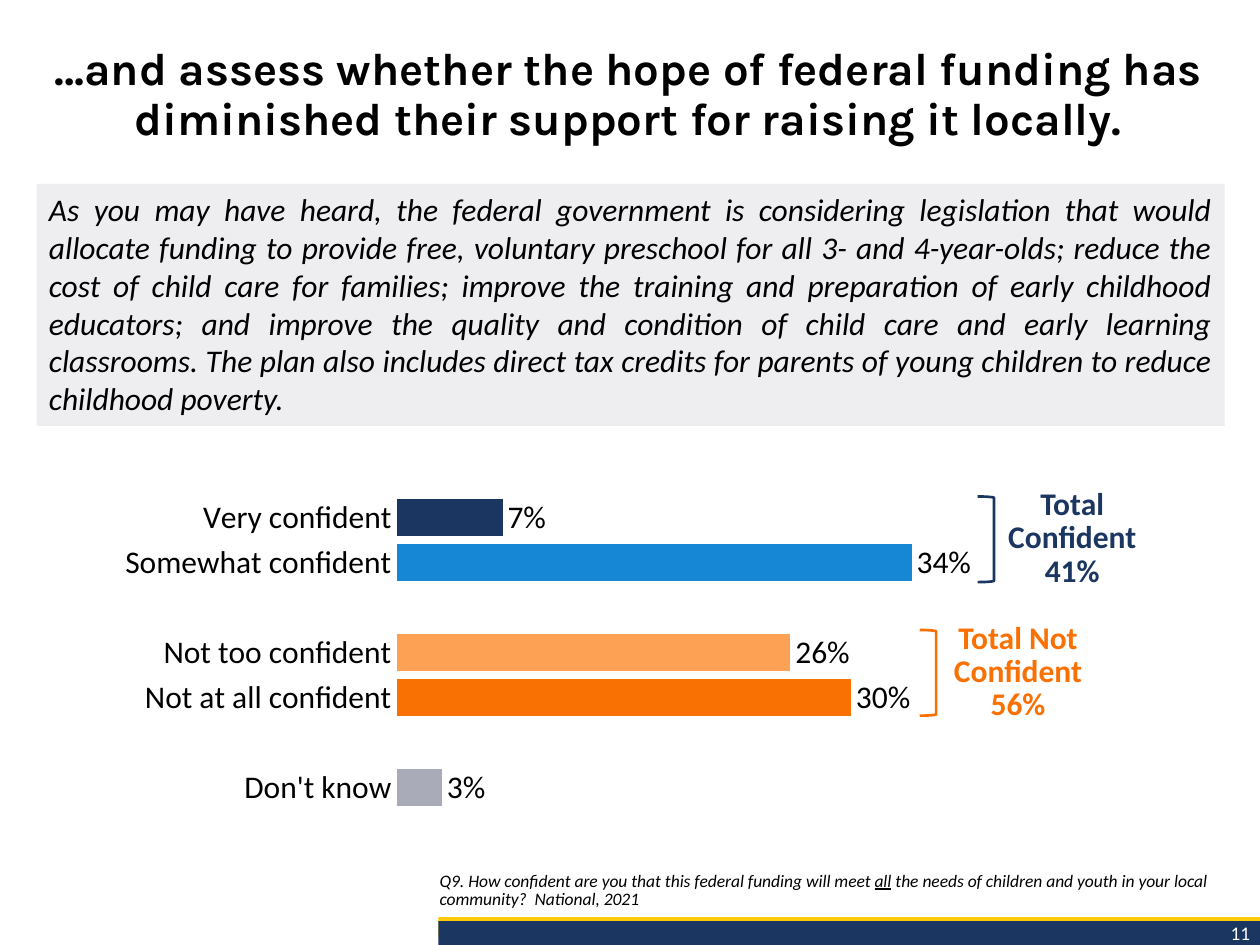
import collections
import dataclasses

import lxml.etree
import pptx
import pptx.chart.data
import pptx.dml.color
import pptx.enum.chart
import pptx.enum.shapes
import pptx.enum.text
import pptx.oxml.ns
import pptx.util

Inches, Pt = pptx.util.Inches, pptx.util.Pt
Align = pptx.enum.text.PP_ALIGN
Anchor = pptx.enum.text.MSO_ANCHOR
Kind = pptx.enum.shapes.MSO_SHAPE
Box = collections.namedtuple("Box", "x y w h")


@dataclasses.dataclass(frozen=True)
class Theme:
    """Hold the colours, fonts and type sizes."""
    black: str = "000000"
    white: str = "FFFFFF"
    navy: str = "1B3660"
    blue: str = "1587D4"
    peach: str = "FDA155"
    orange: str = "F97103"
    grey: str = "A9ABB8"
    pale: str = "EEEEF1"
    gold: str = "FCCA09"
    head: str = "Karla"
    body: str = "Calibri"
    title: float = 26
    text: float = 18
    page: float = 11
    note: float = 10


THEME = Theme()


def apply(item, **look):
    """Set attributes from format values."""
    for name, value in look.items():
        setattr(item, name, value)


def tint(text):
    """Turn a hex string into a colour."""
    return pptx.dml.color.RGBColor.from_string(text)


def style(font, size, color=THEME.black, name=THEME.body, **look):
    """Format a font."""
    apply(font, size=Pt(size), name=name, **look)
    font.color.rgb = tint(color)


def place(box):
    """Give the box as four lengths."""
    return tuple(Inches(side) for side in box)


def inner(box, x, y, w, h):
    """Give a box offset from the corner of another."""
    return Box(box.x + x, box.y + y, w, h)


def write(frame, parts, size, para, anchor=Anchor.TOP, **look):
    """Fill a frame with one paragraph and return its runs."""
    apply(frame, word_wrap=True, vertical_anchor=anchor,
          auto_size=pptx.enum.text.MSO_AUTO_SIZE.NONE)
    line = frame.paragraphs[0]
    apply(line, **para)
    for part in parts:
        if part == "\n":
            line.add_line_break()
        else:
            run = line.add_run()
            run.text = part
            style(run.font, size, **look)
    return line.runs


def label(slide, box, *args, **look):
    """Add a text box and return its runs."""
    return write(slide.shapes.add_textbox(*place(box)).text_frame, *args, **look)


def panel(slide, box, color):
    """Add a plain filled box."""
    shape = slide.shapes.add_shape(Kind.RECTANGLE, *place(box))
    shape.shadow.inherit = False
    shape.fill.solid()
    shape.fill.fore_color.rgb = tint(color)
    shape.line.fill.background()
    return shape


def heading(slide, box, text):
    """Place and fill the title."""
    title = slide.shapes.title
    apply(title, **dict(zip(("left", "top", "width", "height"), place(box))))
    write(title.text_frame, [text], THEME.title,
          {"alignment": Align.CENTER, "line_spacing": 0.9},
          name=THEME.head, bold=True)


def prompt(slide, box, text):
    """Add the shaded statement."""
    write(panel(slide, box, THEME.pale).text_frame, [text], THEME.text,
          {"alignment": Align.JUSTIFY}, italic=True)


def frame_plot(chart, **sides):
    """Fix the inner plot area as parts of the chart."""
    qn = pptx.oxml.ns.qn
    area = chart._chartSpace.find(".//" + qn("c:plotArea"))
    for old in area.findall(qn("c:layout")):
        area.remove(old)
    outer = lxml.etree.Element(qn("c:layout"))
    area.insert(0, outer)
    layout = lxml.etree.SubElement(outer, qn("c:manualLayout"))
    values = {"layoutTarget": "inner", "xMode": "edge", "yMode": "edge", **sides}
    for name, value in values.items():
        lxml.etree.SubElement(layout, qn("c:" + name)).set("val", str(value))


def bars(slide, box, rows):
    """Add the bar chart of answers."""
    data = pptx.chart.data.CategoryChartData(number_format="0%")
    data.categories = [name for name, value, color in rows]
    data.add_series("Series 1", [value for name, value, color in rows])
    enum = pptx.enum.chart
    chart = slide.shapes.add_chart(
        enum.XL_CHART_TYPE.BAR_CLUSTERED, *place(box), data).chart
    apply(chart, has_legend=False, has_title=False)
    style(chart.font, THEME.note)
    frame_plot(chart, x=0.325, y=0.035, w=0.645, h=0.88)
    axis = chart.category_axis
    apply(axis, reverse_order=True, has_major_gridlines=False,
          major_tick_mark=enum.XL_TICK_MARK.NONE)
    axis.format.line.fill.background()
    style(axis.tick_labels.font, THEME.text)
    apply(chart.value_axis, visible=False, has_major_gridlines=False,
          minimum_scale=0, maximum_scale=0.45, major_unit=0.15)
    plot = chart.plots[0]
    apply(plot, gap_width=21, vary_by_categories=False, has_data_labels=True)
    apply(plot.data_labels, show_value=True, number_format="0%",
          number_format_is_linked=False,
          position=enum.XL_LABEL_POSITION.OUTSIDE_END)
    style(plot.data_labels.font, THEME.text)
    for index, (name, value, color) in enumerate(rows):
        if value is not None:
            fill = plot.series[0].points[index].format.fill
            fill.solid()
            fill.fore_color.rgb = tint(color)


def total(slide, box, name, share, color):
    """Add a bracket with its total beside it."""
    mark = slide.shapes.add_shape(
        Kind.RIGHT_BRACKET, *place(inner(box, 0, 0.11, 0.13, 0.68)))
    mark.shadow.inherit = False
    mark.fill.background()
    mark.line.color.rgb = tint(color)
    mark.line.width = Pt(1.5)
    label(slide, inner(box, 0.13, 0, box.w - 0.13, box.h), [name, "\n", share],
          THEME.text, {"alignment": Align.CENTER, "line_spacing": Pt(19)},
          color=color, bold=True)


def results(slide, box):
    """Add the chart and its totals."""
    gap = ("", None, None)
    bars(slide, box, [
        ("Very confident", 0.07, THEME.navy),
        ("Somewhat confident", 0.34, THEME.blue),
        gap,
        ("Not too confident", 0.26, THEME.peach),
        ("Not at all confident", 0.3, THEME.orange),
        gap,
        ("Don't know", 0.03, THEME.grey),
    ])
    total(slide, inner(box, 7.34, 0, 1.37, 0.9),
          "Total Confident", "41%", THEME.navy)
    total(slide, inner(box, 6.88, 1.06, 1.43, 0.9),
          "Total Not Confident", "56%", THEME.orange)


def footer(slide, box, parts, page):
    """Add the source note, the stripes and the page number."""
    panel(slide, inner(box, 0.09, 0.55, 6.52, 0.16), THEME.gold)
    panel(slide, inner(box, 0.09, 0.58, 6.52, 0.19), THEME.navy)
    label(slide, inner(box, 5.15, 0.53, 1.48, 0.29), [page], THEME.page,
          {"alignment": Align.RIGHT}, color=THEME.white)
    runs = label(slide, inner(box, 0, 0, 6.59, 0.54), parts, THEME.note,
                 {"line_spacing": 0.9}, anchor=Anchor.BOTTOM, italic=True)
    runs[1].font.underline = True


def main():
    """Build and save the slide."""
    deck = pptx.Presentation()
    apply(deck, slide_width=Inches(10), slide_height=Inches(7.5))
    slide = deck.slides.add_slide(deck.slide_layouts[5])
    heading(slide, Box(0.04, 0.32, 9.9, 1.31),
            "…and assess whether the hope of federal funding has "
            "diminished their support for raising it locally.")
    prompt(slide, Box(0.29, 1.46, 9.43, 1.92),
           "As you may have heard, the federal government is considering "
           "legislation that would allocate funding to provide free, voluntary "
           "preschool for all 3- and 4-year-olds; reduce the cost of child care "
           "for families; improve the training and preparation of early "
           "childhood educators; and improve the quality and condition of child "
           "care and early learning classrooms. The plan also includes direct "
           "tax credits for parents of young children to reduce childhood poverty.")
    results(slide, Box(0.42, 3.83, 8.39, 2.84))
    footer(slide, Box(3.39, 6.73, 6.61, 0.77), [
        "Q9. How confident are you that this federal funding will meet ", "all",
        " the needs of children and youth in your local community?  National, 2021",
    ], "11")
    deck.save("out.pptx")


if __name__ == "__main__":
    main()
